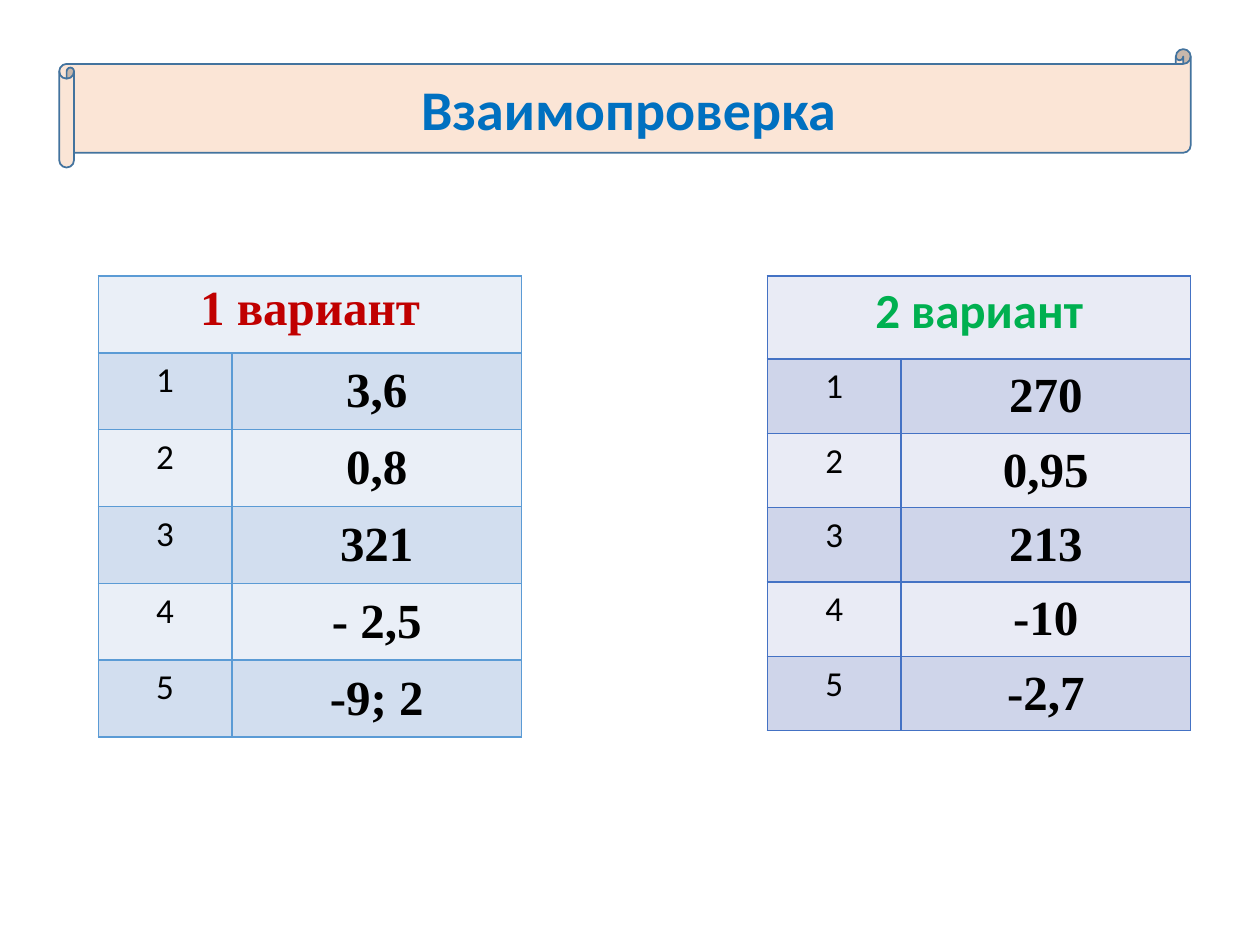
"""Build the peer-check slide with two answer tables."""
from lxml import etree
from pptx import Presentation
from pptx import util as u
from pptx.dml.color import RGBColor
from pptx.enum import shapes, text
from pptx.oxml import ns

COLORS = {
    "black": "000000", "red": "C00000", "green": "00B050", "title": "0070C0",
    "scroll": "FBE5D6", "scroll_line": "43739E",
    "blue_line": "5B9BD5", "blue_light": "EAEFF7", "blue_dark": "D2DEEF",
    "indigo_line": "4472C4", "indigo_light": "E9EBF5", "indigo_dark": "CFD5EA",
}
SERIF = "Times New Roman"
SANS = "Calibri"


def rgb(name):
    return RGBColor.from_string(COLORS[name])


def write(tf, words, size=28, font=SANS, color="black", bold=True):
    p = tf.paragraphs[0]
    p.alignment = text.PP_ALIGN.CENTER
    r = p.add_run()
    r.text = words
    r.font.size = u.Pt(size)
    r.font.name = font
    r.font.bold = bold
    r.font.color.rgb = rgb(color)


def add_banner(s, words):
    sp = s.shapes.add_shape(shapes.MSO_SHAPE.HORIZONTAL_SCROLL, u.Inches(0.47),
                            u.Inches(0.39), u.Inches(8.98), u.Inches(0.94))
    sp.shadow.inherit = False
    sp.fill.solid()
    sp.fill.fore_color.rgb = rgb("scroll")
    sp.line.color.rgb = rgb("scroll_line")
    sp.line.width = u.Pt(1)
    sp.text_frame.vertical_anchor = text.MSO_ANCHOR.MIDDLE
    write(sp.text_frame, words, size=32, color="title")


def style_cell(cell, fill, line):
    tc_pr = cell._tc.get_or_add_tcPr()
    for side in ("a:lnL", "a:lnR", "a:lnT", "a:lnB"):
        ln = etree.SubElement(tc_pr, ns.qn(side), w=str(u.Pt(1)))
        solid = etree.SubElement(ln, ns.qn("a:solidFill"))
        etree.SubElement(solid, ns.qn("a:srgbClr"), val=COLORS[line])
    cell.fill.solid()
    cell.fill.fore_color.rgb = rgb(fill)


def add_answers(s, left, title, answers, theme, heights, **title_format):
    head, body = heights
    rows = len(answers) + 1
    frame = s.shapes.add_table(rows, 2, u.Inches(left), u.Inches(2.19),
                               u.Inches(3.36), u.Inches(head + body * len(answers)))
    table = frame.table
    for column, width in zip(table.columns, (1.06, 2.3)):
        column.width = u.Inches(width)
    for i, row in enumerate(table.rows):
        row.height = u.Inches(body if i else head)
        shade = "dark" if i % 2 else "light"
        for cell in row.cells:
            style_cell(cell, f"{theme}_{shade}", f"{theme}_line")
    table.cell(0, 0).merge(table.cell(0, 1))
    write(table.cell(0, 0).text_frame, title, **title_format)
    for i, answer in enumerate(answers, 1):
        write(table.cell(i, 0).text_frame, str(i), size=20, bold=False)
        cell = table.cell(i, 1)
        cell.vertical_anchor = text.MSO_ANCHOR.MIDDLE
        write(cell.text_frame, answer, font=SERIF)


def main():
    prs = Presentation()
    prs.slide_width, prs.slide_height = u.Inches(10), u.Inches(7.5)
    s = prs.slides.add_slide(prs.slide_layouts[6])
    add_banner(s, "Взаимопроверка")
    add_answers(s, 0.78, "1 вариант", ("3,6", "0,8", "321", "- 2,5", "-9; 2"),
                "blue", (0.61, 0.61), font=SERIF, color="red")
    add_answers(s, 6.09, "2 вариант", ("270", "0,95", "213", "-10", "-2,7"),
                "indigo", (0.66, 0.59), color="green")
    prs.save("out.pptx")


if __name__ == "__main__":
    main()
